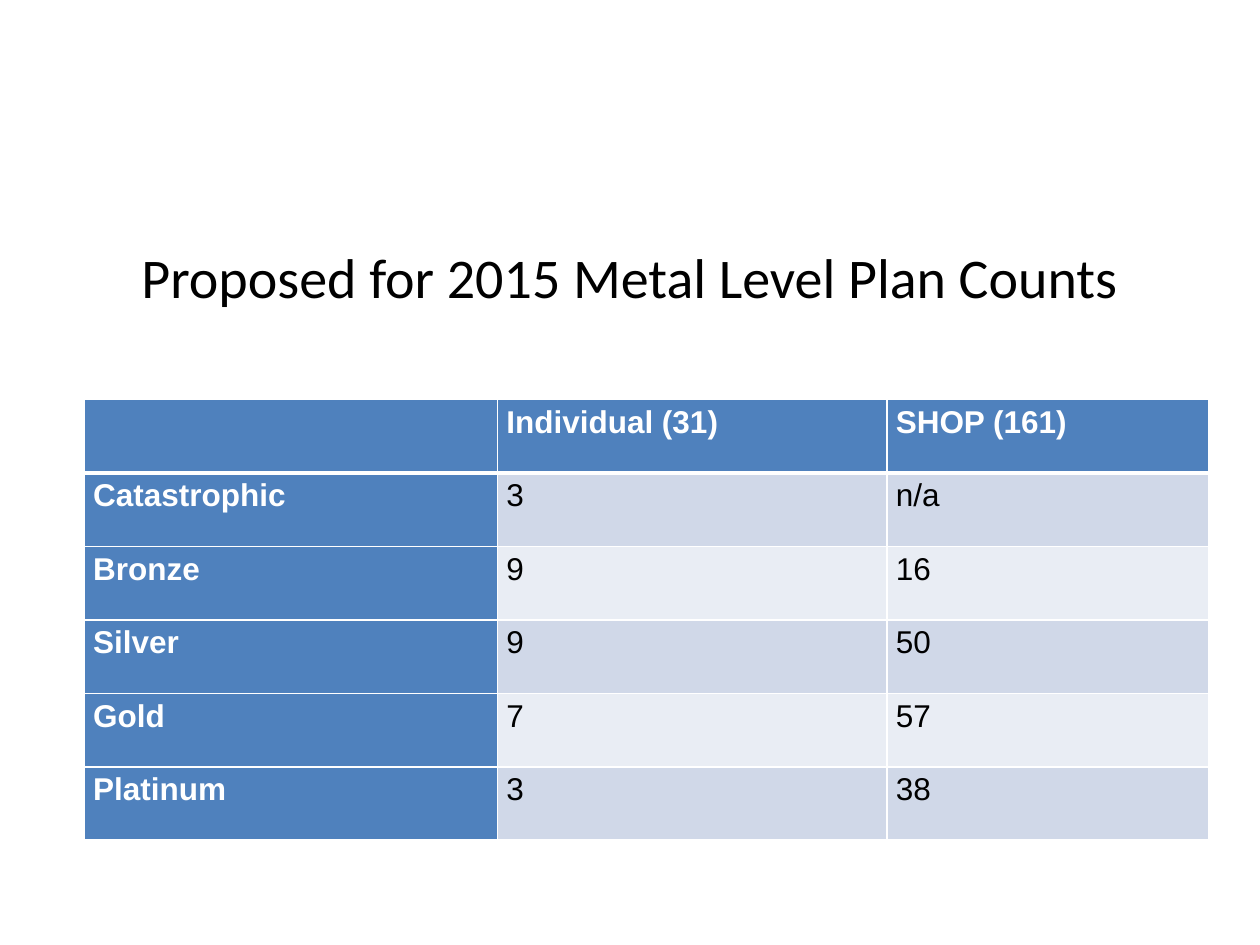
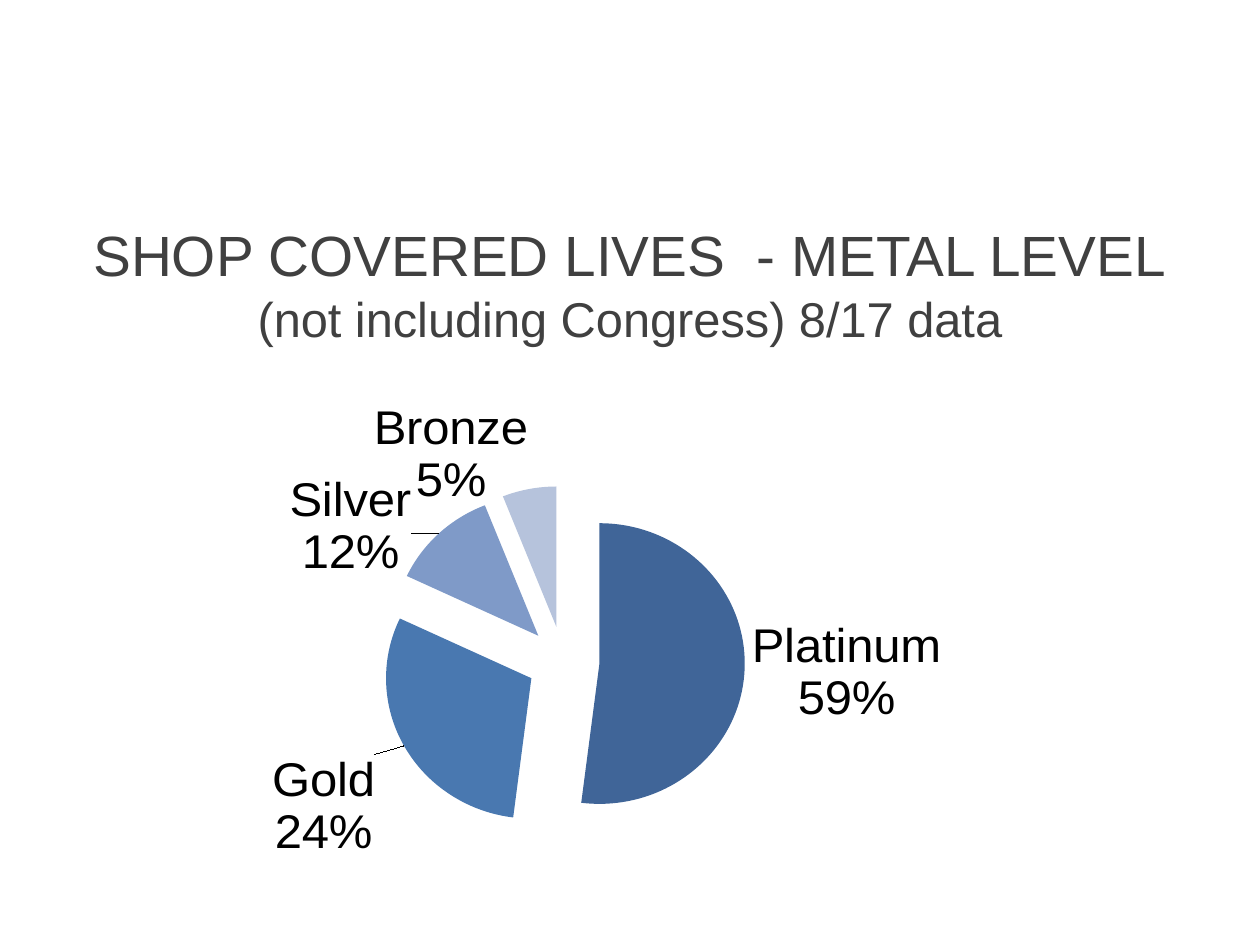
from dataclasses import dataclass

from lxml.etree import SubElement
from pptx import Presentation
from pptx.chart.data import CategoryChartData
from pptx.dml.color import RGBColor
from pptx.enum.chart import XL_CHART_TYPE, XL_LABEL_POSITION
from pptx.enum.text import MSO_ANCHOR, PP_ALIGN
from pptx.oxml import parse_xml
from pptx.oxml.ns import nsdecls, qn
from pptx.slide import Slide
from pptx.table import _Cell
from pptx.util import Inches, Pt

COLORS = {
    "black": "000000",
    "white": "FFFFFF",
    "title_gray": "404040",
    "header": "4F81BD",
    "band_dark": "D0D8E8",
    "band_light": "E9EDF4",
    "platinum": "406598",
    "gold": "4978B0",
    "silver": "7F9AC8",
    "bronze": "B6C3DC",
}
BODY_FONT = "Arial"
TITLE_LEFT, TITLE_WIDTH = 0.5, 9


@dataclass(frozen=True)
class TitleLine:
    text: str
    size: float


@dataclass(frozen=True)
class Title:
    lines: tuple[TitleLine, ...]
    top: float
    height: float
    font: str
    color: str
    bottom_inset: float = 0.05


@dataclass(frozen=True)
class Slice:
    metal: str
    value: int
    share: str
    color: str
    label_shift: tuple[float, float] | None = None


COUNTS_TITLE = Title(
    (TitleLine("Proposed for 2015 Metal Level Plan Counts", 32),),
    2, 0.92, "Calibri", "black", 0.59,
)
LIVES_TITLE = Title(
    (
        TitleLine("SHOP COVERED LIVES  - METAL LEVEL", 32.4),
        TitleLine("(not including Congress) 8/17 data", 27.9),
    ),
    1.75, 1, BODY_FONT, "title_gray",
)
PLAN_COUNTS = [
    ("", "Individual (31)", "SHOP (161)"),
    ("Catastrophic", "3", "n/a"),
    ("Bronze", "9", "16"),
    ("Silver", "9", "50"),
    ("Gold", "7", "57"),
    ("Platinum", "3", "38"),
]
COLUMN_WIDTHS = (3.28, 3.09, 2.55)
TABLE_HEIGHT = 3.5
COVERED_LIVES = [
    Slice("Platinum", 52, "59%", "platinum"),
    Slice("Gold", 30, "24%", "gold", (-0.02, 0.01)),
    Slice("Silver", 12, "12%", "silver", (-0.02, 0.1)),
    Slice("Bronze", 6, "5%", "bronze", (0, 0.05)),
]


def rgb(name: str) -> RGBColor:
    return RGBColor.from_string(COLORS[name])


def style_font(font, name: str, size: float, color: str, bold: bool = False) -> None:
    font.name = name
    font.size = Pt(size)
    font.bold = bold
    font.color.rgb = rgb(color)


def add_title(slide: Slide, title: Title) -> None:
    box = slide.shapes.add_textbox(
        Inches(TITLE_LEFT), Inches(title.top), Inches(TITLE_WIDTH), Inches(title.height)
    )
    frame = box.text_frame
    frame.word_wrap = True
    frame.vertical_anchor = MSO_ANCHOR.MIDDLE
    frame.margin_bottom = Inches(title.bottom_inset)
    paragraph = frame.paragraphs[0]
    paragraph.alignment = PP_ALIGN.CENTER
    for index, line in enumerate(title.lines):
        if index:
            paragraph.add_line_break()
        run = paragraph.add_run()
        run.text = line.text
        style_font(run.font, title.font, line.size, title.color)


def set_borders(cell: _Cell, top: float, bottom: float) -> None:
    properties = cell._tc.get_or_add_tcPr()
    for tag, width in (("lnL", 1), ("lnR", 1), ("lnT", top), ("lnB", bottom)):
        line = SubElement(properties, qn(f"a:{tag}"), w=str(Pt(width)))
        fill = SubElement(line, qn("a:solidFill"))
        SubElement(fill, qn("a:srgbClr"), val=COLORS["white"])


def fill_cell(cell: _Cell, text: str, row: int, column: int) -> None:
    is_heading = row == 0 or column == 0
    band = "band_dark" if row % 2 else "band_light"
    set_borders(cell, 3 if row == 1 else 1, 3 if row == 0 else 1)
    cell.fill.solid()
    cell.fill.fore_color.rgb = rgb("header" if is_heading else band)
    cell.margin_left = cell.margin_right = Inches(0.07)
    cell.margin_top = cell.margin_bottom = 0
    if text:
        paragraph = cell.text_frame.paragraphs[0]
        paragraph.line_spacing = 1.15
        run = paragraph.add_run()
        run.text = text
        style_font(run.font, BODY_FONT, 18, "white" if is_heading else "black", is_heading)


def add_plan_counts(slide: Slide) -> None:
    table = slide.shapes.add_table(
        len(PLAN_COUNTS), len(COLUMN_WIDTHS),
        Inches(0.67), Inches(3.17), Inches(sum(COLUMN_WIDTHS)), Inches(TABLE_HEIGHT),
    ).table
    for column, width in zip(table.columns, COLUMN_WIDTHS):
        column.width = Inches(width)
    for row, texts in enumerate(PLAN_COUNTS):
        table.rows[row].height = Inches(TABLE_HEIGHT / len(PLAN_COUNTS))
        for column, text in enumerate(texts):
            fill_cell(table.cell(row, column), text, row, column)


def manual_layout(**settings: object):
    layout = parse_xml(f"<c:layout {nsdecls('c')}><c:manualLayout/></c:layout>")
    for tag, value in settings.items():
        SubElement(layout[0], qn(f"c:{tag}"), val=str(value))
    return layout


def label_slice(point, metal_slice: Slice) -> None:
    label = point.data_label
    frame = label.text_frame
    for index, text in enumerate((metal_slice.metal, metal_slice.share)):
        paragraph = frame.add_paragraph() if index else frame.paragraphs[0]
        run = paragraph.add_run()
        run.text = text
        style_font(run.font, BODY_FONT, 28, "black")
    label.position = XL_LABEL_POSITION.OUTSIDE_END
    if metal_slice.label_shift:
        x, y = metal_slice.label_shift
        label._dLbl.find(qn("c:idx")).addnext(manual_layout(x=x, y=y))


def add_covered_lives(slide: Slide) -> None:
    data = CategoryChartData(number_format="#,##0")
    data.categories = [metal_slice.metal for metal_slice in COVERED_LIVES]
    data.add_series("Series 1", [metal_slice.value for metal_slice in COVERED_LIVES])
    chart = slide.shapes.add_chart(
        XL_CHART_TYPE.PIE, Inches(0.42), Inches(3), Inches(9), Inches(4.12), data
    ).chart
    chart.has_legend = False
    chart.has_title = False
    style_font(chart.font, BODY_FONT, 18, "black")

    plot = chart.plots[0]
    plot.vary_by_categories = True
    plot_area = plot._element.getparent()
    for automatic in plot_area.findall(qn("c:layout")):
        plot_area.remove(automatic)
    plot_area.insert(0, manual_layout(
        layoutTarget="inner", xMode="edge", yMode="edge", x=0.06, y=0.18, w=0.78, h=0.7
    ))

    series = plot.series[0]
    explosion = parse_xml(f'<c:explosion {nsdecls("c")} val="25"/>')
    series._element.find(qn("c:tx")).addnext(explosion)
    labels = series.data_labels
    labels.show_category_name = True
    labels.show_percentage = True
    labels.show_value = False
    style_font(labels.font, BODY_FONT, 28, "black")
    for index, metal_slice in enumerate(COVERED_LIVES):
        point = series.points[index]
        point.format.fill.solid()
        point.format.fill.fore_color.rgb = rgb(metal_slice.color)
        label_slice(point, metal_slice)


def main() -> None:
    presentation = Presentation()
    presentation.slide_width = Inches(10)
    presentation.slide_height = Inches(7.5)
    blank = presentation.slide_layouts[6]
    for title, add_content in (
        (COUNTS_TITLE, add_plan_counts),
        (LIVES_TITLE, add_covered_lives),
    ):
        slide = presentation.slides.add_slide(blank)
        add_title(slide, title)
        add_content(slide)
    presentation.save("out.pptx")


if __name__ == "__main__":
    main()
